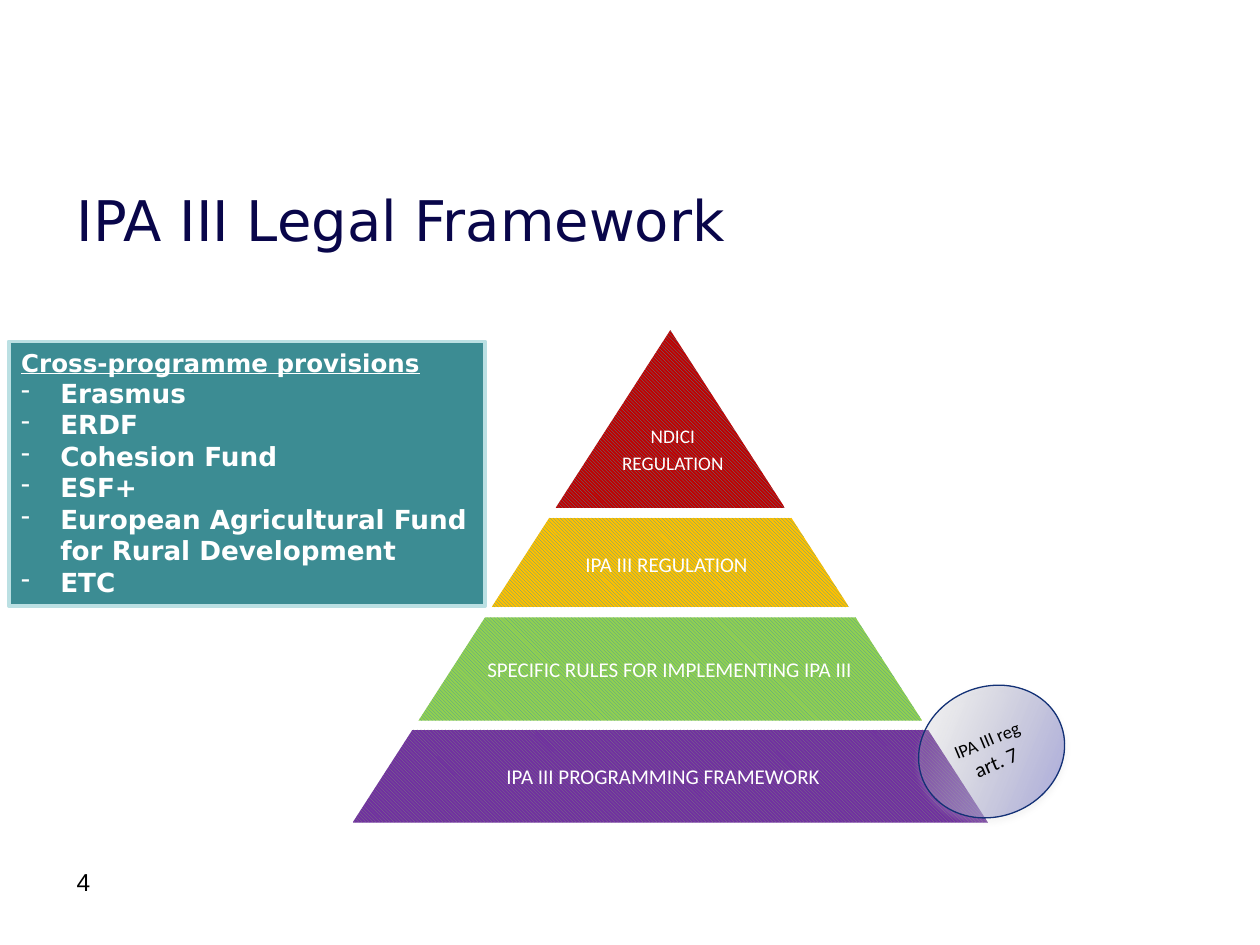
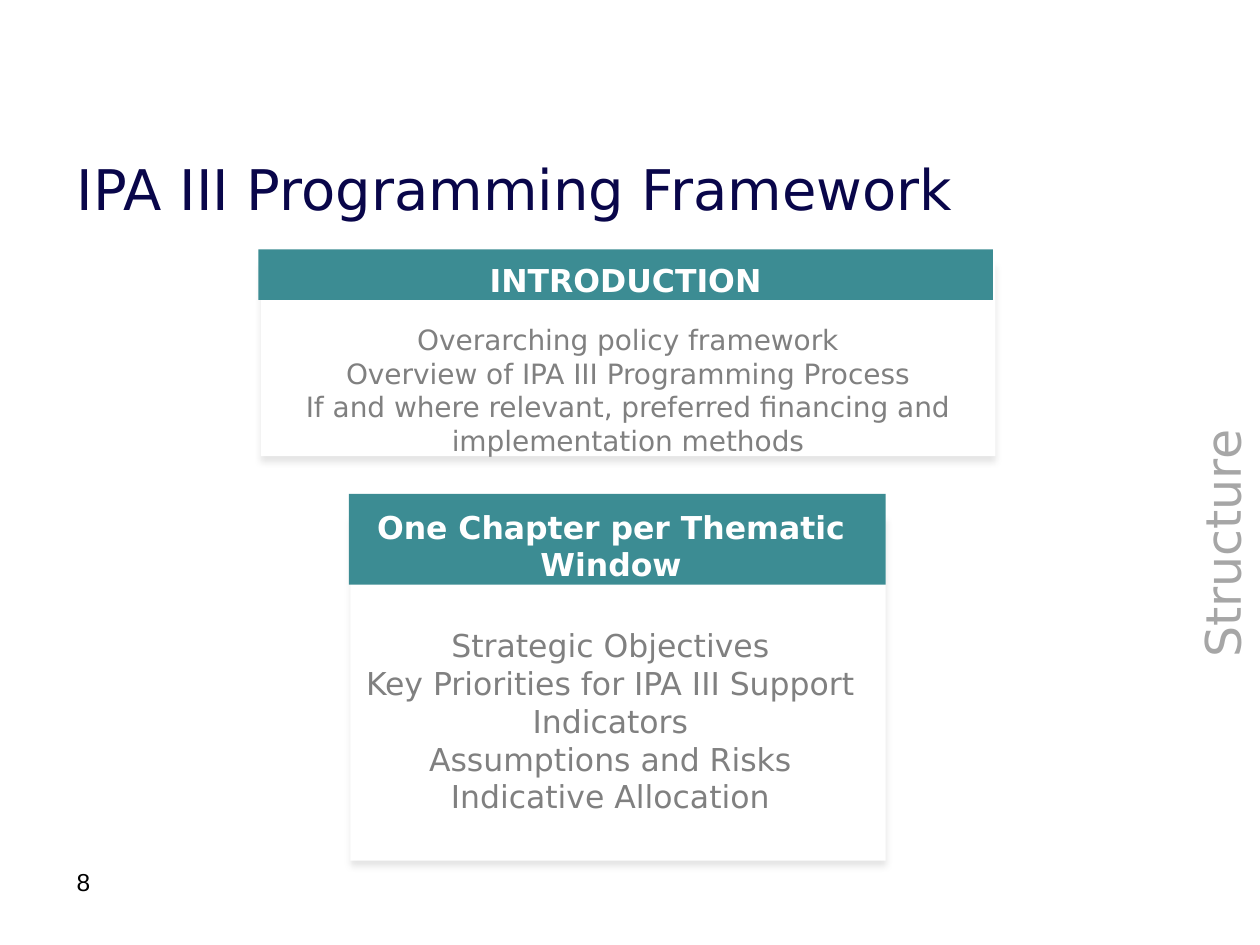
from lxml import etree
from pptx import Presentation
from pptx.dml.color import RGBColor
from pptx.enum import dml, shapes, text
from pptx.oxml import parse_xml
from pptx.oxml.ns import nsdecls, qn
from pptx.util import Inches, Pt

NAVY, TEAL, WHITE, GREY = "09064A", "3C8C93", "FFFFFF", "808080"
SANS, LABEL = "DejaVu Sans", "Calibri"
LEFT, CENTER = text.PP_ALIGN.LEFT, text.PP_ALIGN.CENTER
RECT, OVAL = shapes.MSO_SHAPE.RECTANGLE, shapes.MSO_SHAPE.OVAL


# Shared helpers
def rgb(value):
    return RGBColor.from_string(value)


def style(p, size, color, font=SANS, bold=False, align=LEFT):
    p.alignment = align
    for r in p.runs:
        r.font.name, r.font.size, r.font.bold = font, Pt(size), bold
        r.font.color.rgb = rgb(color)


def write(tf, lines, size, color, **look):
    tf.word_wrap = True
    tf.text = "\n".join(lines)
    for p in tf.paragraphs:
        style(p, size, color, **look)
    return tf.paragraphs


def add_text(s, box, lines, size, color, **look):
    sp = s.shapes.add_textbox(*map(Inches, box))
    write(sp.text_frame, lines, size, color, **look)
    return sp


def add_box(s, kind, box, fill=None, line=None, width=1):
    sp = s.shapes.add_shape(kind, *map(Inches, box))
    sp.shadow.inherit = False
    if fill:
        sp.fill.solid()
        sp.fill.fore_color.rgb = rgb(fill)
    if line:
        sp.line.color.rgb = rgb(line)
        sp.line.width = Pt(width)
    else:
        sp.line.fill.background()
    return sp


def add_shadow(sp, color, alpha, blur, dist):
    effects = sp._element.spPr.find(qn("a:effectLst"))
    effects.append(parse_xml(
        f'<a:outerShdw {nsdecls("a")} blurRad="{Pt(blur)}" dist="{Pt(dist)}" '
        f'dir="5400000" rotWithShape="0"><a:srgbClr val="{color}">'
        f'<a:alpha val="{alpha * 1000}"/></a:srgbClr></a:outerShdw>'))


def add_slide(prs, title, title_top, number):
    s = prs.slides.add_slide(prs.slide_layouts[5])
    sp = s.shapes.title
    sp.left, sp.top, sp.width, sp.height = map(Inches, (0.51, title_top, 9, 1.02))
    sp.text_frame.vertical_anchor = text.MSO_ANCHOR.MIDDLE
    write(sp.text_frame, [title], 32, NAVY)
    add_text(s, (0.51, 6.83, 2.33, 0.52), [number], 14, "000000", font="Arial")
    return s


# Legal framework: pyramid
def add_pyramid(s, apex_x, apex_y, tiers):
    slope = 0.645  # half width gained per inch of height
    for top, bottom, color, hatch, label, label_box, size in tiers:
        near, far = ((y - apex_y) * slope for y in (top, bottom))
        points = [(apex_x - near, top), (apex_x + near, top),
                  (apex_x + far, bottom), (apex_x - far, bottom)]
        points = [(Inches(x), Inches(y)) for x, y in points]
        builder = s.shapes.build_freeform(*points[0], scale=1.0)
        builder.add_line_segments(points[1:], close=True)
        sp = builder.convert_to_shape()
        sp.shadow.inherit = False
        sp.line.fill.background()
        sp.fill.patterned()
        sp.fill.pattern = dml.MSO_PATTERN.LIGHT_DOWNWARD_DIAGONAL
        sp.fill.fore_color.rgb = rgb(hatch)
        sp.fill.back_color.rgb = rgb(color)
        label_sp = add_text(s, label_box, label, size, WHITE, font=LABEL, align=CENTER)
        for p in label_sp.text_frame.paragraphs[1:]:
            p.space_before = Pt(size * 0.2)


# Legal framework: list of provisions
def add_provisions(s, box, heading, items):
    sp = add_box(s, RECT, box, TEAL, "BBE0E3", 2)
    sp.text_frame.vertical_anchor = text.MSO_ANCHOR.TOP
    head, *rest = write(sp.text_frame, [heading, *items], 15, WHITE, bold=True)
    head.runs[0].font.size = Pt(14)
    head.runs[0].font.underline = True
    for p in rest:
        pPr = p._p.get_or_add_pPr()
        pPr.set("marL", str(Inches(0.31)))
        pPr.set("indent", str(-Inches(0.31)))
        etree.SubElement(pPr, qn("a:buFontTx"))
        etree.SubElement(pPr, qn("a:buChar")).set("char", "-")


# Legal framework: tilted badge
def add_badge(s, box, lines, sizes):
    sp = add_box(s, OVAL, box, line="133176", width=0.75)
    sp.rotation = 337.4
    sp.fill.gradient()
    stops = "".join(
        f'<a:gs pos="{pos * 1000}"><a:srgbClr val="{color}">'
        f'<a:alpha val="{alpha * 1000}"/></a:srgbClr></a:gs>'
        for pos, color, alpha in ((0, "9C9CDF", 15), (5, "B3B3B3", 0), (100, "9C9CDF", 100)))
    old = sp._element.spPr.find(qn("a:gradFill"))
    old.getparent().replace(old, parse_xml(
        f'<a:gradFill {nsdecls("a")} rotWithShape="1"><a:gsLst>{stops}</a:gsLst>'
        '<a:lin ang="2700000" scaled="0"/></a:gradFill>'))
    add_shadow(sp, "D9D9D9", 35, 3.1, 1.8)
    sp.text_frame.vertical_anchor = text.MSO_ANCHOR.MIDDLE
    paragraphs = write(sp.text_frame, lines, 12, "000000", font=LABEL, align=CENTER)
    for p, size in zip(paragraphs, sizes):
        p.runs[0].font.size = Pt(size)


# Programming framework: card with a heading band
def add_card(s, body, band, heading, heading_box, lines, lines_box, size):
    add_shadow(add_box(s, RECT, body, WHITE), "000000", 10, 4, 3)
    add_box(s, RECT, band, TEAL)
    add_text(s, lines_box, lines, size, GREY, align=CENTER)
    add_text(s, heading_box, [heading], 18, WHITE, bold=True, align=CENTER)


def legal_framework(prs):
    s = add_slide(prs, "IPA III Legal Framework", 1.23, "4")
    add_pyramid(s, 5.32, 2.62, [
        (2.62, 4.03, "C00000", "4597A0", ["NDICI", "REGULATION"],
         (4.48, 3.32, 1.72, 0.69), 11),
        (4.11, 4.82, "FFC000", "4597A0", ["IPA III REGULATION"],
         (4.19, 4.33, 2.2, 0.3), 12),
        (4.9, 5.72, "92D050", "4597A0", ["SPECIFIC RULES FOR IMPLEMENTING IPA III"],
         (3.74, 5.16, 3.15, 0.3), 12),
        (5.79, 6.53, "7030A0", "808080", ["IPA III PROGRAMMING FRAMEWORK"],
         (3.18, 6.01, 4.17, 0.3), 12),
    ])
    add_provisions(s, (0.07, 2.71, 3.78, 2.1), "Cross-programme provisions", [
        "Erasmus", "ERDF", "Cohesion Fund", "ESF+",
        "European Agricultural Fund for Rural Development", "ETC"])
    add_badge(s, (7.28, 5.45, 1.18, 1.03), ["IPA III reg", "art. 7"], (10.5, 12))


def programming_framework(prs):
    s = add_slide(prs, "IPA III Programming Framework", 0.98, "8")
    side = add_text(s, (6.53, 4.02, 6.35, 0.59), ["Structure"], 28, "A6A6A6", align=CENTER)
    side.rotation = 270
    add_card(s, (2.07, 2.07, 5.83, 1.55), (2.05, 1.98, 5.83, 0.4),
             "INTRODUCTION", (2.05, 2.02, 5.83, 0.4),
             ["Overarching policy framework", "Overview of IPA III Programming Process",
              "If and where relevant, preferred financing and implementation methods"],
             (2.07, 2.51, 5.83, 1.18), 16)
    add_card(s, (2.78, 4.09, 4.25, 2.74), (2.77, 3.92, 4.26, 0.72),
             "One Chapter per Thematic Window", (2.67, 3.98, 4.36, 0.71),
             ["Strategic Objectives", "Key Priorities for IPA III Support", "Indicators",
              "Assumptions and Risks", "Indicative Allocation"],
             (2.68, 4.92, 4.33, 1.62), 18)


def main():
    prs = Presentation()
    prs.slide_width, prs.slide_height = Inches(10), Inches(7.5)
    legal_framework(prs)
    programming_framework(prs)
    prs.save("out.pptx")


if __name__ == "__main__":
    main()
